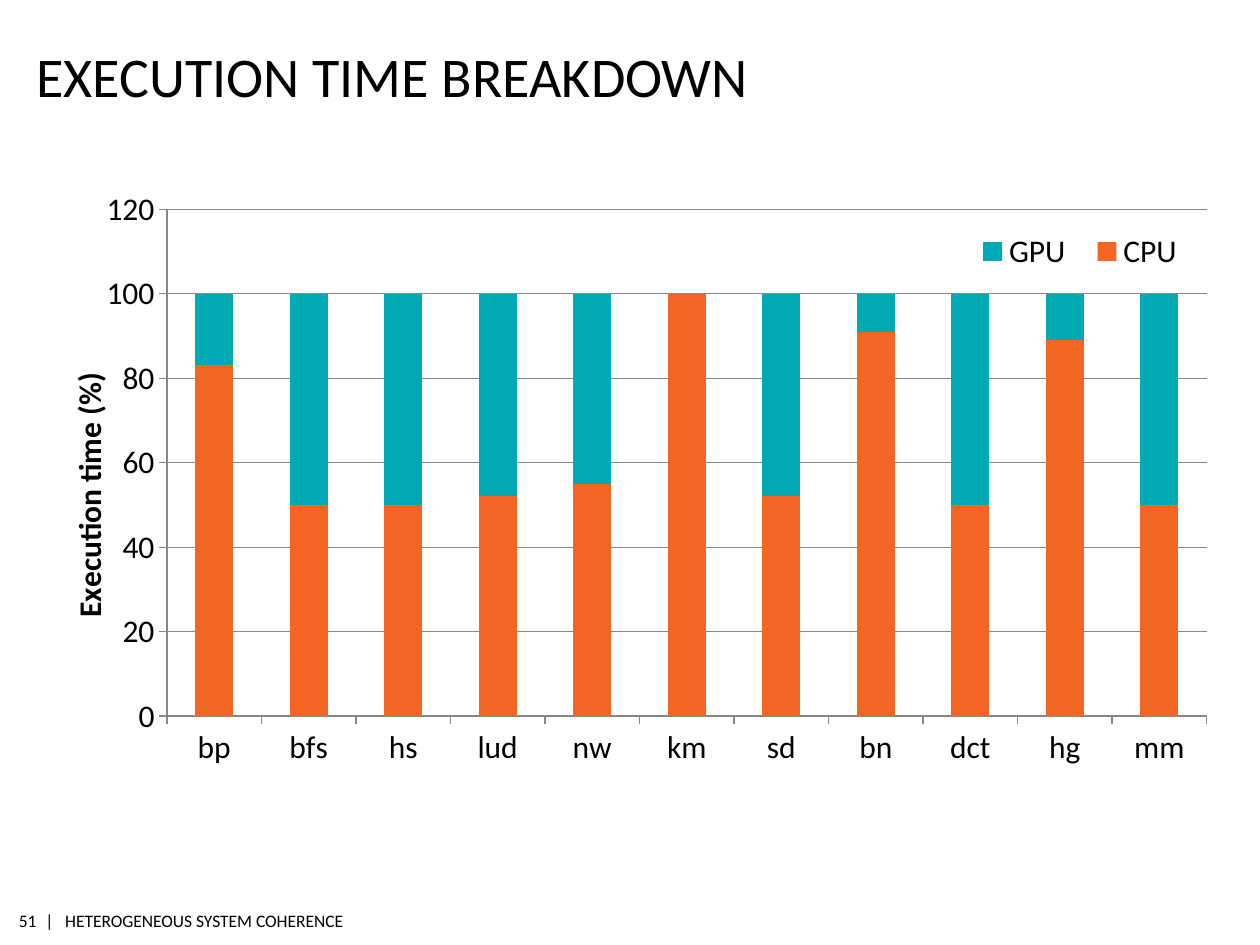
from lxml.etree import SubElement
from pptx import Presentation
from pptx.chart.data import CategoryChartData
from pptx.dml.color import RGBColor
from pptx.enum.chart import XL_CHART_TYPE, XL_LEGEND_POSITION, XL_TICK_MARK
from pptx.enum.text import MSO_ANCHOR, PP_ALIGN
from pptx.oxml.ns import qn
from pptx.util import Inches, Pt

BLACK = RGBColor(0x00, 0x00, 0x00)
GRAY = RGBColor(0x87, 0x87, 0x87)
ORANGE = RGBColor(0xF2, 0x65, 0x22)
TEAL = RGBColor(0x00, 0xAA, 0xB5)


def style_font(font, size):
    font.name = "Calibri"
    font.size = Pt(size)
    font.color.rgb = BLACK


def place(parent, index, **settings):
    for old in parent.findall(qn("c:layout")):
        parent.remove(old)
    layout = SubElement(parent, qn("c:layout"))
    parent.insert(index, layout)
    manual = SubElement(layout, qn("c:manualLayout"))
    for name, value in settings.items():
        SubElement(manual, qn(f"c:{name}")).set("val", str(value))


deck = Presentation()
deck.slide_width = Inches(10)
deck.slide_height = Inches(7.5)
page = deck.slides.add_slide(deck.slide_layouts[5])

title = page.shapes.title
title.left, title.top = Inches(0.29), Inches(0.34)
title.width, title.height = Inches(8.4), Inches(0.52)
frame = title.text_frame
frame.margin_left = frame.margin_right = frame.margin_bottom = 0
frame.margin_top = Inches(0.05)
frame.vertical_anchor = MSO_ANCHOR.BOTTOM
para = frame.paragraphs[0]
para.alignment = PP_ALIGN.LEFT
span = para.add_run()
span.text = "EXECUTION TIME BREAKDOWN"
style_font(span.font, 32)

footers = [
    ("|   HETEROGENEOUS SYSTEM COHERENCE", 0.36, 2.59, PP_ALIGN.LEFT),
    ("51", 0.13, 0.16, PP_ALIGN.RIGHT),
]
for text, left, width, alignment in footers:
    box = page.shapes.add_textbox(Inches(left), Inches(7.18), Inches(width), Inches(0.26))
    frame = box.text_frame
    frame.word_wrap = False
    frame.margin_left = frame.margin_right = 0
    frame.margin_top = frame.margin_bottom = Inches(0.04)
    frame.vertical_anchor = MSO_ANCHOR.MIDDLE
    para = frame.paragraphs[0]
    para.alignment = alignment
    span = para.add_run()
    span.text = text
    style_font(span.font, 10)

cpu_shares = [83, 50, 50, 52, 55, 100, 52, 91, 50, 89, 50]
data = CategoryChartData()
data.categories = ["bp", "bfs", "hs", "lud", "nw", "km", "sd", "bn", "dct", "hg", "mm"]
data.add_series("CPU", cpu_shares)
data.add_series("GPU", [100 - share for share in cpu_shares])
chart = page.shapes.add_chart(
    XL_CHART_TYPE.COLUMN_STACKED, Inches(0.3), Inches(1.51), Inches(9.4), Inches(5.4), data
).chart
style_font(chart.font, 18)
chart.has_title = False
plot = chart.plots[0]
plot.gap_width = 150
plot.overlap = 100
plot.vary_by_categories = False
for series, color in zip(plot.series, (ORANGE, TEAL)):
    series.format.fill.solid()
    series.format.fill.fore_color.rgb = color

value_axis = chart.value_axis
value_axis.minimum_scale, value_axis.maximum_scale = 0, 120
value_axis.major_unit = 20
value_axis.has_major_gridlines = True
gridlines = value_axis.major_gridlines
for axis in (value_axis, chart.category_axis):
    axis.major_tick_mark = XL_TICK_MARK.OUTSIDE
for item in (value_axis, chart.category_axis, gridlines):
    item.format.line.color.rgb = GRAY
    item.format.line.width = Pt(0.75)
axis_title = value_axis.axis_title
span = axis_title.text_frame.paragraphs[0].add_run()
span.text = "Execution time (%)"
style_font(span.font, 18)
span.font.bold = True

chart.has_legend = True
legend = chart.legend
legend.position = XL_LEGEND_POSITION.RIGHT
legend.include_in_layout = False
style_font(legend.font, 18)

plot_area = chart.element.find(".//" + qn("c:plotArea"))
place(plot_area, 0, layoutTarget="inner", xMode="edge", yMode="edge",
      x=0.109, y=0.028, w=0.878, h=0.745)
place(value_axis.axis_title._element, 1, xMode="edge", yMode="edge", x=0.02, y=0.26)
place(chart.element.find(".//" + qn("c:legend")), 1, xMode="edge", yMode="edge",
      x=0.78, y=0.05, w=0.2, h=0.08)

deck.save("out.pptx")
